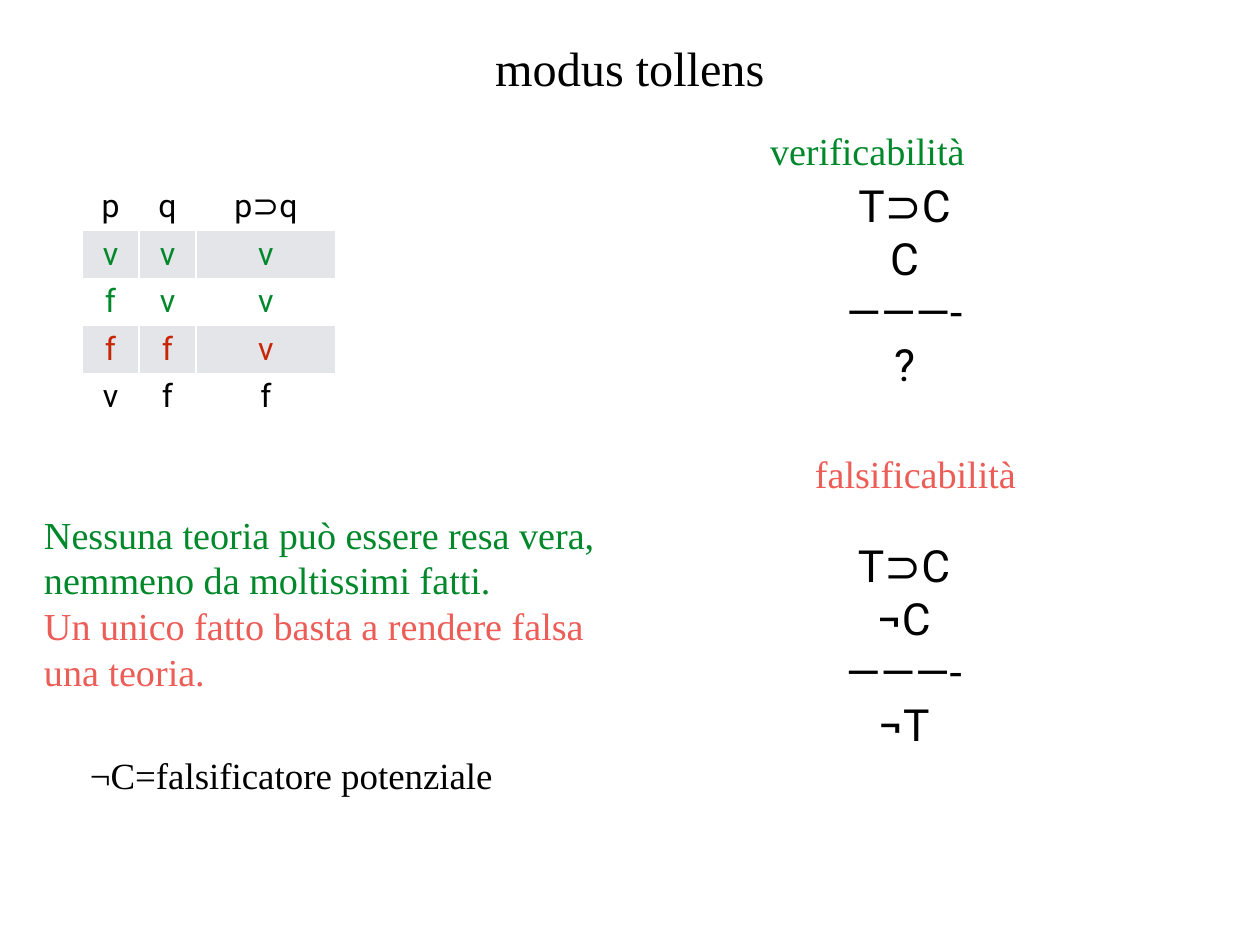
from pptx import Presentation
from pptx import util as u
from pptx.dml.color import RGBColor
from pptx.enum import text
from pptx.oxml.ns import qn
from lxml import etree

BLACK = RGBColor(0x00, 0x00, 0x00)
WHITE = RGBColor(0xFF, 0xFF, 0xFF)
GREEN = RGBColor(0x00, 0x88, 0x2B)
RED = RGBColor(0xC8, 0x25, 0x06)
CORAL = RGBColor(0xEC, 0x5D, 0x57)
BAND = RGBColor(0xE3, 0xE5, 0xE8)
SERIF = "Times New Roman"
SANS = "Roboto"
CENTER = text.PP_ALIGN.CENTER
LEFT = text.PP_ALIGN.LEFT
MIDDLE = text.MSO_ANCHOR.MIDDLE


def px(length):
    return u.Emu(length * 10320)


def assign(target, values):
    for key, value in values.items():
        setattr(target, key, value)


class LogicSlide:
    inset = 5

    def __init__(self, deck):
        self.slide = deck.slides.add_slide(deck.slide_layouts[1])

    def margins(self, inset):
        sides = ("margin_left", "margin_top", "margin_right", "margin_bottom")
        return dict.fromkeys(sides, px(inset))

    def place(self, holder, box):
        assign(holder, dict(zip(("left", "top", "width", "height"), map(px, box))))

    def line(self, paragraph, words, size, face, color, align=CENTER, spacing=1.0):
        paragraph.text = words
        assign(paragraph, {"alignment": align, "line_spacing": spacing,
                           "space_before": u.Pt(0)})
        assign(paragraph.font, {"size": u.Pt(size), "name": face, "bold": False})
        paragraph.font.color.rgb = color

    def frame(self, holder, inset, anchor, wrap=True):
        frame = holder.text_frame
        assign(frame, {"auto_size": text.MSO_AUTO_SIZE.NONE, "word_wrap": wrap,
                       "vertical_anchor": anchor, **self.margins(inset)})
        return frame

    def title(self, words, box):
        heading = self.slide.shapes.title
        self.place(heading, box)
        frame = self.frame(heading, 0, text.MSO_ANCHOR.BOTTOM)
        self.line(frame.paragraphs[0], words, 39.2, SERIF, BLACK)

    def body(self, words, box, indent, color):
        content = self.slide.placeholders[1]
        self.place(content, box)
        paragraph = self.frame(content, 0, text.MSO_ANCHOR.TOP).paragraphs[0]
        properties = paragraph._p.get_or_add_pPr()
        properties.set("marL", str(px(indent)))
        properties.set("indent", "0")
        etree.SubElement(properties, qn("a:buNone"))
        self.line(paragraph, words, 31, SERIF, color, LEFT, 1.2)

    def note(self, lines, box, size, face=SERIF, align=CENTER, wrap=True):
        holder = self.slide.shapes.add_textbox(*map(px, box))
        frame = self.frame(holder, self.inset, MIDDLE, wrap)
        for number, (words, color) in enumerate(lines):
            paragraph = frame.add_paragraph() if number else frame.paragraphs[0]
            self.line(paragraph, words, size, face, color, align)

    def argument(self, steps, box):
        self.note([(step, BLACK) for step in steps], box, 36, SANS)

    def truth_table(self, rows, left, top, widths, height):
        grid = self.slide.shapes.add_table(
            len(rows), len(widths), px(left), px(top),
            px(sum(widths)), px(height * len(rows))).table
        assign(grid, {"first_row": False, "horz_banding": False})
        for column, width in zip(grid.columns, widths):
            column.width = px(width)
        for number, (values, color) in enumerate(rows):
            grid.rows[number].height = px(height)
            for cell, value in zip(grid.rows[number].cells, values):
                assign(cell, {"vertical_anchor": MIDDLE, **self.margins(self.inset)})
                cell.fill.solid()
                cell.fill.fore_color.rgb = BAND if number % 2 else WHITE
                self.line(cell.text_frame.paragraphs[0], value, 26, SANS, color)


def main():
    deck = Presentation()
    assign(deck, {"slide_width": px(1260), "slide_height": px(945)})
    tollens = LogicSlide(deck)
    tollens.title("modus tollens", (123, 30, 1014, 66))
    tollens.body("verificabilità", (34, 118, 1154, 710), 736, GREEN)
    tollens.truth_table([
        (("p", "q", "p⊃q"), BLACK),
        (("v", "v", "v"), GREEN),
        (("f", "v", "v"), GREEN),
        (("f", "f", "v"), RED),
        (("v", "f", "f"), BLACK),
    ], 82, 183, (57, 57, 140), 45)
    tollens.argument(("T⊃C", "C", "———-", "?"), (773, 171, 263, 226))
    tollens.argument(("T⊃C", "¬C", "———-", "¬T"), (786, 531, 236, 226))
    tollens.note([("falsificabilità", CORAL)], (809, 447, 213, 52), 31, wrap=False)
    tollens.note([
        ("Nessuna teoria può essere resa vera,", GREEN),
        ("nemmeno da moltissimi fatti.", GREEN),
        ("Un unico fatto basta a rendere falsa", CORAL),
        ("una teoria.", CORAL),
    ], (39, 510, 581, 185), 31, align=LEFT)
    tollens.note([("¬C=falsificatore potenziale", BLACK)], (84, 750, 415, 50), 30,
                 wrap=False)
    deck.save("out.pptx")


if __name__ == "__main__":
    main()
